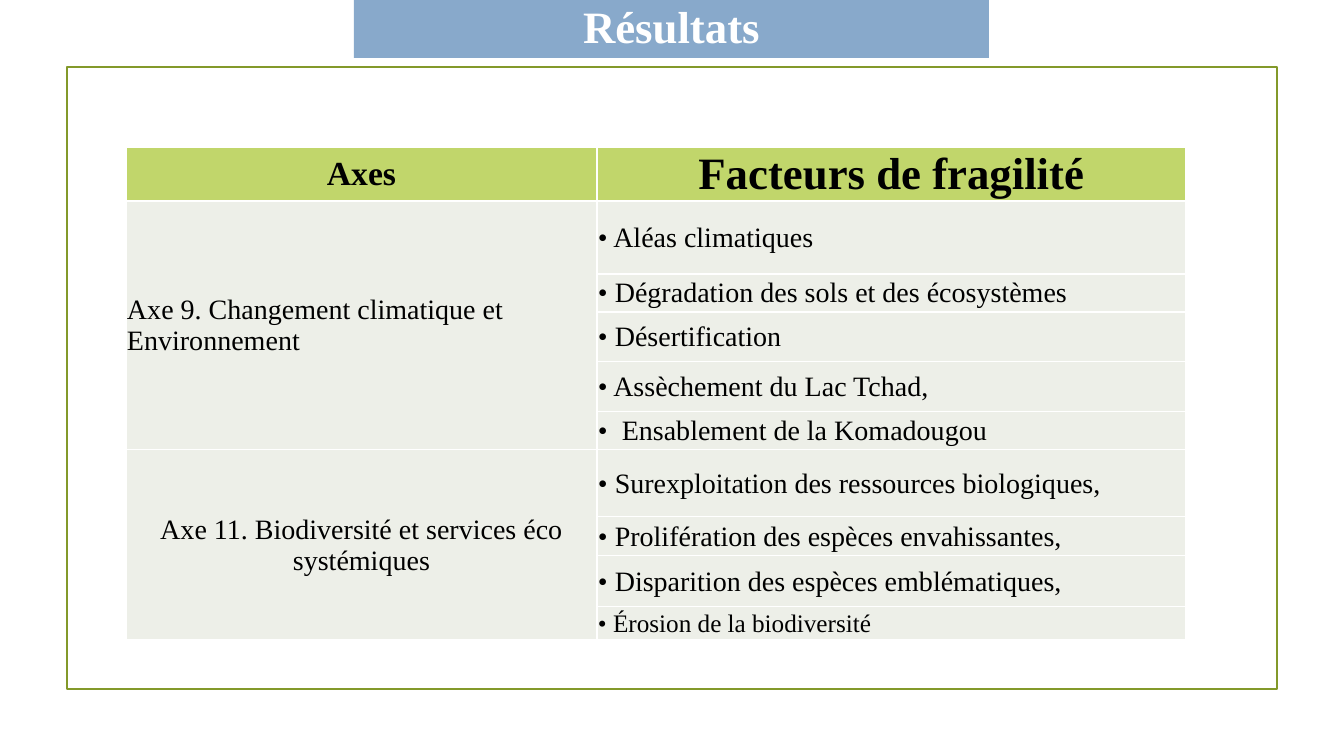
import pptx
import pptx.util
import pptx.dml.color
import pptx.enum.shapes
import pptx.enum.text
import lxml.etree

TITLE = "Résultats"
HEADERS = ["Axes", "Facteurs de fragilité"]
LEFT = pptx.enum.text.PP_ALIGN.LEFT
CENTER = pptx.enum.text.PP_ALIGN.CENTER
AXES = [
    ("Axe 9. Changement climatique et Environnement", LEFT, [
        "Aléas climatiques",
        "Dégradation des sols et des écosystèmes",
        "Désertification",
        "Assèchement du Lac Tchad,",
        " Ensablement de la Komadougou",
    ]),
    ("Axe 11. Biodiversité et services éco systémiques", CENTER, [
        "Surexploitation des ressources biologiques,",
        "Prolifération des espèces envahissantes,",
        "Disparition des espèces emblématiques,",
        "Érosion de la biodiversité",
    ]),
]
SLIDE = (1344, 756)
FRAME = (67, 67, 1210, 622)
BANNER = (354, -6, 635, 64)
TABLE_AT = (126, 147)
COLS = [471, 589]
ROWS = [54, 73, 38, 50, 50, 38, 67, 39, 51, 33]
THEME = {
    "font": "Times New Roman",
    "frame": "83992A", "banner": "88A9CB", "header": "C1D66B",
    "body": "EDEFE8", "text": "000000", "white": "FFFFFF",
    "title_pt": 32, "axes_pt": 24, "factors_pt": 32, "body_pt": 20, "last_pt": 18,
    "frame_pt": 1.25, "border_pt": 1,
}


def px(n):
    return pptx.util.Emu(round(n * 914400 / 100.8))


def color(name):
    return pptx.dml.color.RGBColor.from_string(THEME[name])


def write(tf, text, size, name="text", bold=False, align=CENTER):
    p = tf.paragraphs[0]
    p.text = text
    p.alignment = align
    font = p.runs[0].font
    font.name = THEME["font"]
    font.size = pptx.util.Pt(THEME[size])
    font.bold = bold
    font.color.rgb = color(name)


def add_rect(s, box):
    sp = s.shapes.add_shape(pptx.enum.shapes.MSO_SHAPE.RECTANGLE, *map(px, box))
    sp.shadow.inherit = False
    return sp


def style_cell(cell, fill):
    cell.margin_left = cell.margin_right = cell.margin_top = px(1)
    cell.margin_bottom = 0
    cell.vertical_anchor = pptx.enum.text.MSO_ANCHOR.MIDDLE
    ns = "{http://schemas.openxmlformats.org/drawingml/2006/main}"
    tcPr = cell._tc.get_or_add_tcPr()
    for side in ("lnL", "lnR", "lnT", "lnB"):
        width = pptx.util.Pt(THEME["border_pt"])
        ln = lxml.etree.SubElement(tcPr, ns + side, w=str(int(width)))
        solid = lxml.etree.SubElement(ln, ns + "solidFill")
        lxml.etree.SubElement(solid, ns + "srgbClr", val=THEME["white"])
    cell.fill.solid()
    cell.fill.fore_color.rgb = color(fill)


def add_axes_table(s):
    size = (sum(COLS), sum(ROWS))
    table = s.shapes.add_table(len(ROWS), len(COLS), *map(px, TABLE_AT + size)).table
    table.horz_banding = False
    for column, width in zip(table.columns, COLS):
        column.width = px(width)
    for i, height in enumerate(ROWS):
        table.rows[i].height = px(height)
        for j in range(len(COLS)):
            style_cell(table.cell(i, j), "body" if i else "header")
    for j, size in enumerate(("axes_pt", "factors_pt")):
        write(table.cell(0, j).text_frame, HEADERS[j], size, bold=True)
    row = 1
    for axis, align, factors in AXES:
        cell = table.cell(row, 0)
        cell.merge(table.cell(row + len(factors) - 1, 0))
        write(cell.text_frame, axis, "body_pt", align=align)
        for factor in factors:
            size = "last_pt" if row == len(ROWS) - 1 else "body_pt"
            write(table.cell(row, 1).text_frame, "• " + factor, size, align=LEFT)
            row += 1


def main():
    prs = pptx.Presentation()
    prs.slide_width, prs.slide_height = map(px, SLIDE)
    s = prs.slides.add_slide(prs.slide_layouts[6])

    frame = add_rect(s, FRAME)
    frame.fill.background()
    frame.line.color.rgb = color("frame")
    frame.line.width = pptx.util.Pt(THEME["frame_pt"])

    add_axes_table(s)

    banner = add_rect(s, BANNER)
    banner.fill.solid()
    banner.fill.fore_color.rgb = color("banner")
    banner.line.fill.background()
    tf = banner.text_frame
    tf.word_wrap = True
    tf.vertical_anchor = pptx.enum.text.MSO_ANCHOR.TOP
    write(tf, TITLE, "title_pt", "white", bold=True)

    prs.save("out.pptx")


if __name__ == "__main__":
    main()
